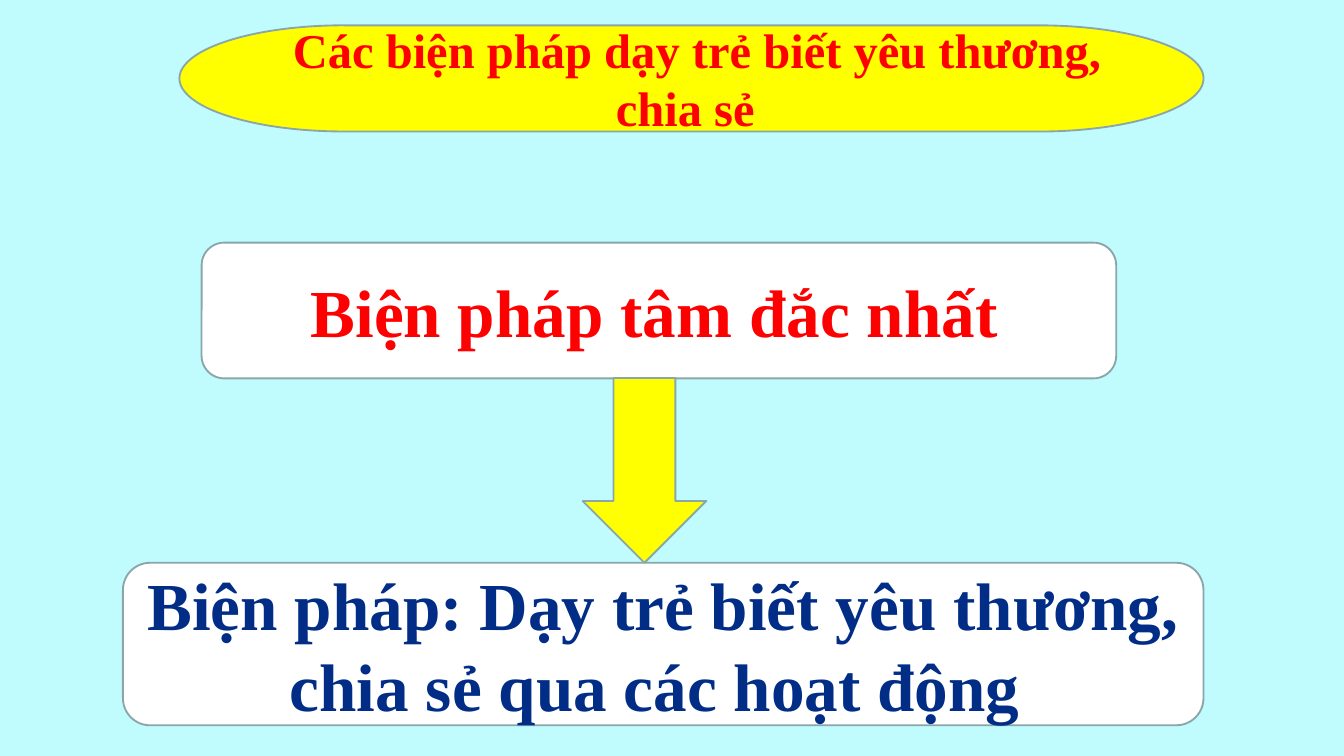
from pptx import Presentation
from pptx.dml.color import RGBColor
from pptx.enum.shapes import MSO_SHAPE as Kind
from pptx.enum.text import MSO_ANCHOR as Anchor, PP_ALIGN as Align
from pptx.util import Inches, Pt

WIDE = Inches(10)
HIGH = WIDE * 9 // 16
FONT = "Times New Roman"
SKY, WHITE, YELLOW = "C0FBFE", "FFFFFF", "FFFF00"
RED, NAVY, GREY = "FF0000", "012D86", "8AA6A8"


def paint(fill, color):
    fill.solid()
    fill.fore_color.rgb = RGBColor.from_string(color)


def add_box(slide, kind, left, top, width, height, color):
    """Place a shape; lengths are percent of the slide's width and height."""
    box = slide.shapes.add_shape(
        kind,
        round(WIDE * left / 100), round(HIGH * top / 100),
        round(WIDE * width / 100), round(HIGH * height / 100),
    )
    box.shadow.inherit = False
    paint(box.fill, color)
    paint(box.line.fill, GREY)
    box.line.width = Pt(1)
    return box


def add_run(para, text, size, color, bold=True):
    run = para.add_run()
    run.text = text
    font = run.font
    font.name, font.size, font.bold = FONT, Pt(size), bold
    paint(font.fill, color)


def add_text(box, text, size, color):
    frame = box.text_frame
    frame.word_wrap = True
    frame.vertical_anchor = Anchor.MIDDLE
    para = frame.paragraphs[0]
    para.alignment = Align.CENTER
    add_run(para, text, size, color)
    return para


def main():
    deck = Presentation()
    deck.slide_width, deck.slide_height = WIDE, HIGH
    slide = deck.slides.add_slide(deck.slide_layouts[6])
    paint(slide.background.fill, SKY)

    # Chosen measure, at the foot
    goal = add_box(slide, Kind.ROUNDED_RECTANGLE, 9.15, 74.45, 80.4, 21.5, WHITE)
    add_text(goal, "Biện pháp: Dạy trẻ biết yêu thương, chia sẻ qua các hoạt động ",
             36, NAVY)

    # Heading box, with a small trailing space, and the arrow down from it
    head = add_box(slide, Kind.ROUNDED_RECTANGLE, 15, 32.1, 68.05, 17.95, WHITE)
    para = add_text(head, "Biện pháp tâm đắc nhất", 36, RED)
    add_run(para, " ", 20, RED, bold=False)
    add_box(slide, Kind.DOWN_ARROW, 43.35, 50, 9.2, 24.45, YELLOW)

    # Title
    title = add_box(slide, Kind.FLOWCHART_TERMINATOR, 13.35, 3.35, 76.2, 14.05, YELLOW)
    add_text(title, " Các biện pháp dạy trẻ biết yêu thương, chia sẻ ", 26, RED)

    deck.save("out.pptx")


if __name__ == "__main__":
    main()
